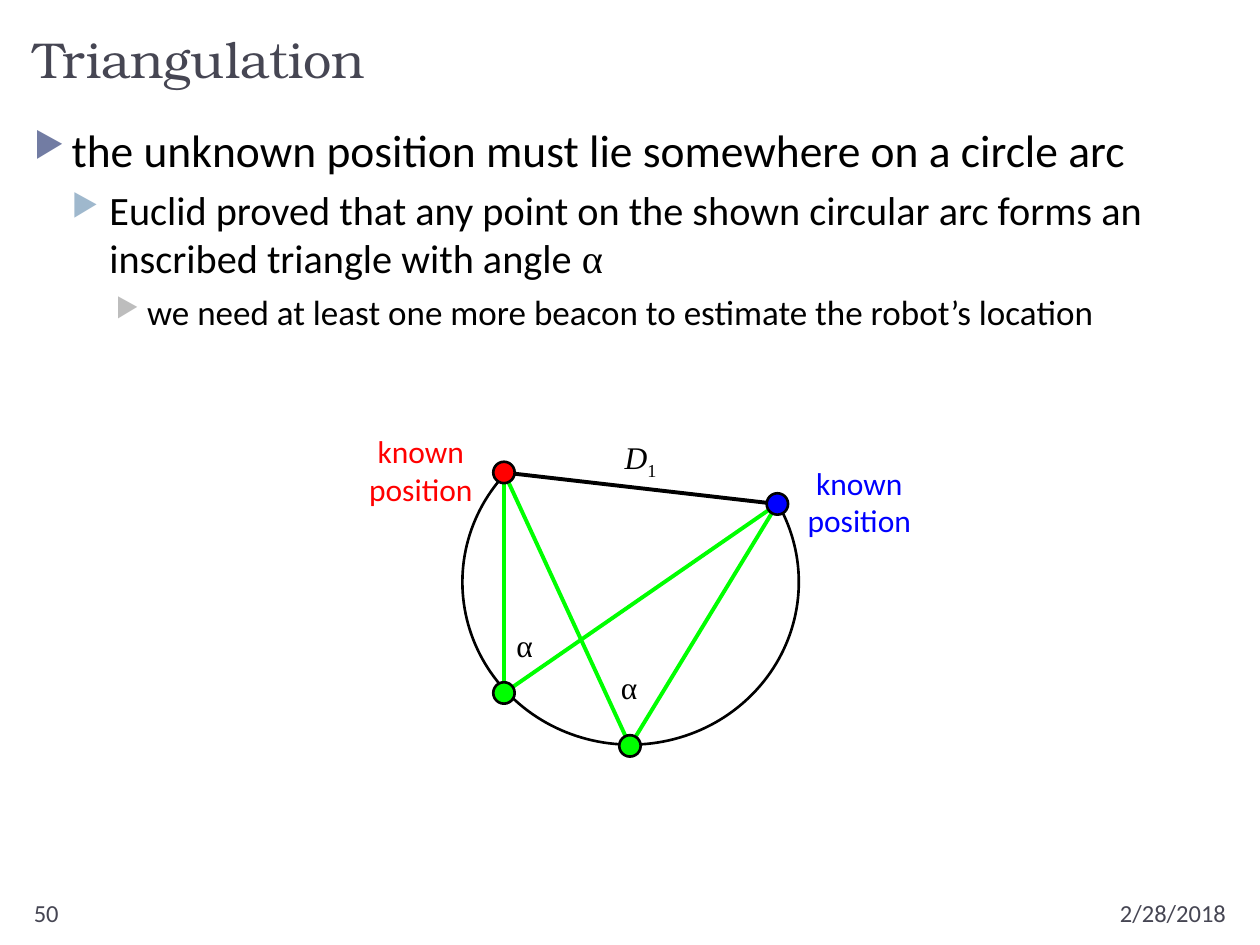
from dataclasses import dataclass

from lxml import etree
from pptx import Presentation
from pptx import util as u
from pptx.dml.color import RGBColor
from pptx.enum import shapes, text
from pptx.oxml.ns import qn


@dataclass(frozen=True)
class Theme:
    title_font: str = "TeX Gyre Bonum"
    body_font: str = "Calibri"
    math_font: str = "Times New Roman"
    heading: str = "464653"
    ink: str = "000000"
    paper: str = "FFFFFF"
    red: str = "FF0000"
    green: str = "00FF00"
    blue: str = "0000FF"
    bullets: tuple = ("727CA3", "9FB8CD", "BDBDBD")
    body_sizes: tuple = (26, 23, 20)
    title_size: float = 28.8
    footer_size: int = 14
    label_size: int = 18
    outline: float = 1.5
    ray: float = 2.25


T = Theme()
LEFT, CENTER, RIGHT = text.PP_ALIGN.LEFT, text.PP_ALIGN.CENTER, text.PP_ALIGN.RIGHT

# Points of the construction, in inches
RED_BEACON = (4, 3.75)
BLUE_BEACON = (6.17, 4)
LOWER_LEFT = (4, 5.5)
BOTTOM = (5, 5.92)
DOT = 0.17


def inches(*values):
    return [u.Inches(v) for v in values]


def add_run(p, content, font=T.body_font, size=T.label_size, color=T.ink,
            italic=False, baseline=0):
    r = p.add_run()
    r.text = content
    r.font.name, r.font.size, r.font.italic = font, u.Pt(size), italic
    r.font.color.rgb = RGBColor.from_string(color)
    if baseline:
        r.font._element.set("baseline", str(baseline * 1000))


def add_text(s, box, lines, align=LEFT, anchor=text.MSO_ANCHOR.TOP, wrap=True, **fmt):
    """Each line is a string or a list of (string, format overrides) runs."""
    tf = s.shapes.add_textbox(*inches(*box)).text_frame
    tf.word_wrap = wrap
    tf.vertical_anchor = anchor
    tf.auto_size = text.MSO_AUTO_SIZE.NONE if wrap else text.MSO_AUTO_SIZE.SHAPE_TO_FIT_TEXT
    for i, line in enumerate(lines):
        p = tf.add_paragraph() if i else tf.paragraphs[0]
        p.alignment = align
        for content, extra in [(line, {})] if isinstance(line, str) else line:
            add_run(p, content, **{**fmt, **extra})
    return tf


def set_bullet(p, level, margin, hanging, before):
    p.level = level
    p.space_before = u.Pt(before)
    pPr = p._p.get_or_add_pPr()
    pPr.set("marL", str(u.Inches(margin)))
    pPr.set("indent", str(-u.Inches(hanging)))
    color = etree.SubElement(pPr, qn("a:buClr"))
    etree.SubElement(color, qn("a:srgbClr"), val=T.bullets[level])
    etree.SubElement(pPr, qn("a:buSzPct"), val="76000")
    etree.SubElement(pPr, qn("a:buChar"), char="▶")


def add_shape(s, kind, box, fill=None, line=None):
    sp = s.shapes.add_shape(kind, *inches(*box))
    sp.shadow.inherit = False
    if fill:
        sp.fill.solid()
        sp.fill.fore_color.rgb = RGBColor.from_string(fill)
    else:
        sp.fill.background()
    if line:
        sp.line.color.rgb = RGBColor.from_string(line)
        sp.line.width = u.Pt(T.outline)
    else:
        sp.line.fill.background()


def add_dot(s, center, fill):
    x, y = center
    add_shape(s, shapes.MSO_SHAPE.OVAL, (x - DOT / 2, y - DOT / 2, DOT, DOT), fill, T.ink)


def add_line(s, start, end, color):
    line = s.shapes.add_connector(shapes.MSO_CONNECTOR.STRAIGHT, *inches(*start, *end))
    line.line.color.rgb = RGBColor.from_string(color)
    line.line.width = u.Pt(T.ray)
    etree.SubElement(line._element.spPr, qn("a:effectLst"))


def add_body(s):
    sizes = [{"size": size} for size in T.body_sizes]
    tf = add_text(s, (0.17, 0.92, 9.67, 6), [
        [("the unknown position must lie somewhere on a circle arc", sizes[0])],
        [("Euclid proved that any point on the shown circular arc forms an "
          "inscribed triangle with angle ", sizes[1]),
         ("α", {**sizes[1], "font": T.math_font})],
        [("we need at least one more beacon to estimate the robot’s location", sizes[2])],
    ])
    indents = [(0.3, 0.3, 6), (0.6, 0.3, 5), (0.9, 0.25, 5)]
    for level, (p, indent) in enumerate(zip(tf.paragraphs, indents)):
        set_bullet(p, level, *indent)


def add_diagram(s):
    add_shape(s, shapes.MSO_SHAPE.OVAL, (3.67, 3.33, 2.67, 2.58), line=T.ink)
    for beacon in (RED_BEACON, BLUE_BEACON):
        add_line(s, BOTTOM, beacon, T.green)
    add_dot(s, BOTTOM, T.green)

    # White panels leave only the arc below the beacons
    for left, top in ((3.92, 3.08), (4.33, 3.33)):
        add_shape(s, shapes.MSO_SHAPE.RECTANGLE, (left, top, 2.17, 0.67), T.paper)

    add_line(s, RED_BEACON, BLUE_BEACON, T.ink)
    for beacon in (RED_BEACON, BLUE_BEACON):
        add_line(s, LOWER_LEFT, beacon, T.green)
    for center, color in ((LOWER_LEFT, T.green), (BLUE_BEACON, T.blue), (RED_BEACON, T.red)):
        add_dot(s, center, color)

    for left, top, color in ((2.83, 3.38, T.red), (6.31, 3.63, T.blue)):
        add_text(s, (left, top, 1.02, 0.71), ["known", "position"],
                 align=CENTER, wrap=False, color=color)
    for left, top in ((4.83, 5.25), (4, 4.92)):
        add_text(s, (left, top, 0.33, 0.4), ["α"], wrap=False, font=T.math_font)
    add_text(s, (4.86, 3.43, 0.47, 0.4), [[("D", {"italic": True}), ("1", {"baseline": -25})]],
             wrap=False, font=T.math_font)


def main():
    prs = Presentation()
    prs.slide_width, prs.slide_height = inches(10, 7.5)
    s = prs.slides.add_slide(prs.slide_layouts[6])
    add_text(s, (0.17, 0.17, 9.67, 0.58), ["Triangulation"], anchor=text.MSO_ANCHOR.BOTTOM,
             font=T.title_font, size=T.title_size, color=T.heading)
    footer = {"size": T.footer_size, "color": T.heading}
    add_text(s, (8, 7.08, 1.83, 0.27), ["2/28/2018"], align=RIGHT, **footer)
    add_text(s, (0.17, 7.08, 2.17, 0.27), ["50"], **footer)
    add_body(s)
    add_diagram(s)
    prs.save("out.pptx")


if __name__ == "__main__":
    main()
